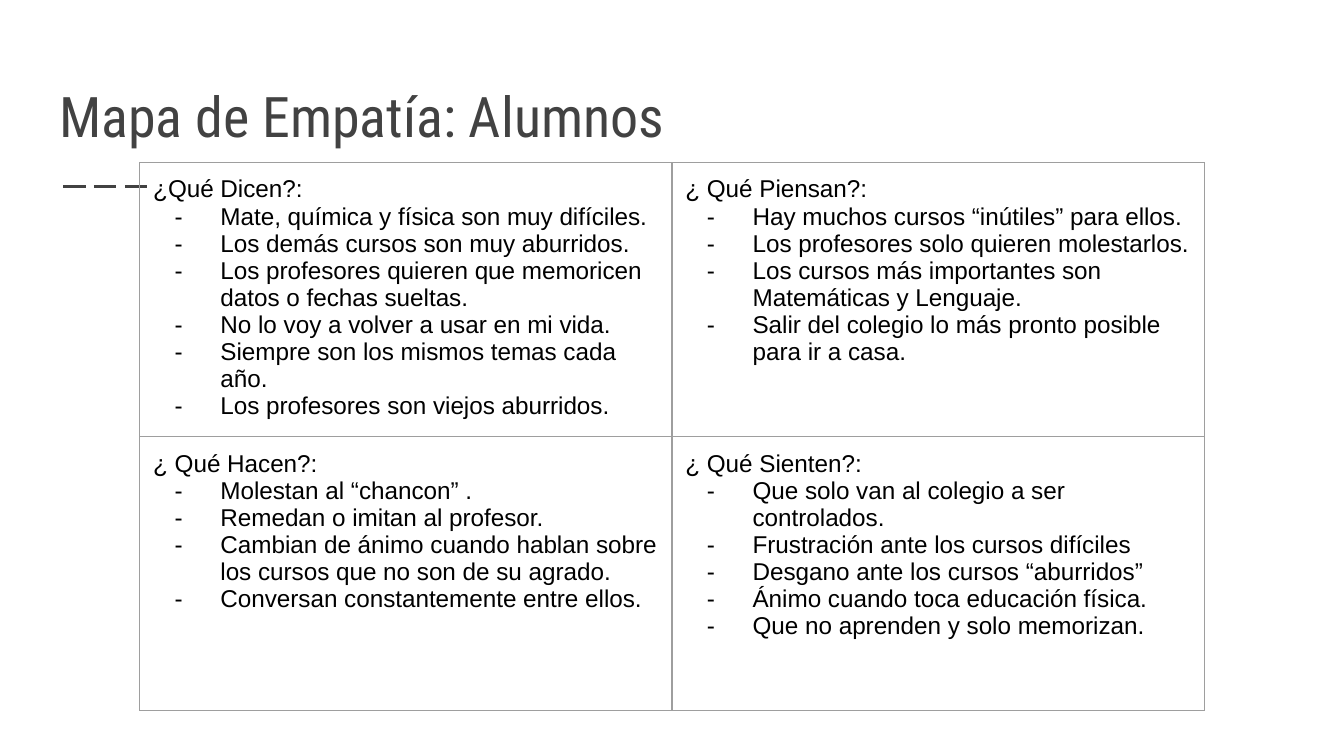
"""Build the empathy map slide: a title, a dashed accent and a two-by-two table."""
from typing import NamedTuple

from lxml.etree import SubElement
from pptx import Presentation
from pptx.dml.color import RGBColor
from pptx.enum.dml import MSO_LINE
from pptx.enum.shapes import MSO_CONNECTOR
from pptx.enum.text import MSO_ANCHOR, MSO_AUTO_SIZE, PP_ALIGN
from pptx.oxml.ns import qn
from pptx.util import Inches, Pt

COLORS = {"title": "424242", "text": "000000", "border": "9E9E9E"}
WIDTH = Inches(10)
HEIGHT = WIDTH * 9 // 16
COLUMNS = ROWS = 2
COLUMN_WIDTH, ROW_HEIGHT = Inches(3.96), Inches(2.04)
TABLE_LEFT, TABLE_TOP = (WIDTH - COLUMNS * COLUMN_WIDTH) // 2, Inches(1.21)
INSET = Inches(0.1)
INDENT, HANGING = Inches(0.5), Inches(-0.34)
BORDER_WIDTH = Pt(0.75)
INSETS = {f"margin_{side}": INSET for side in ("left", "top", "right", "bottom")}


class Quadrant(NamedTuple):
    """One cell of the map, with its question and answers."""
    column: int
    row: int
    question: str
    answers: tuple[str, ...]


QUADRANTS = (
    Quadrant(0, 0, "¿Qué Dicen?:", (
        "Mate, química y física son muy difíciles.",
        "Los demás cursos son muy aburridos.",
        "Los profesores quieren que memoricen datos o fechas sueltas.",
        "No lo voy a volver a usar en mi vida.",
        "Siempre son los mismos temas cada año.",
        "Los profesores son viejos aburridos.",
    )),
    Quadrant(1, 0, "¿ Qué Piensan?:", (
        "Hay muchos cursos “inútiles” para ellos.",
        "Los profesores solo quieren molestarlos.",
        "Los cursos más importantes son Matemáticas y Lenguaje.",
        "Salir del colegio lo más pronto posible para ir a casa.",
    )),
    Quadrant(0, 1, "¿ Qué Hacen?:", (
        "Molestan al “chancon” .",
        "Remedan o imitan al profesor.",
        "Cambian de ánimo cuando hablan sobre los cursos que no son de su agrado.",
        "Conversan constantemente entre ellos.",
    )),
    Quadrant(1, 1, "¿ Qué Sienten?:", (
        "Que solo van al colegio a ser controlados.",
        "Frustración ante los cursos difíciles",
        "Desgano ante los cursos “aburridos”",
        "Ánimo cuando toca educación física.",
        "Que no aprenden y solo memorizan.",
    )),
)


def set_attributes(target: object, values: dict) -> None:
    """Set every named value on the target."""
    for name, value in values.items():
        setattr(target, name, value)


def write(paragraph, text: str, font: str, size: float, color: str) -> None:
    """Add a formatted run to the paragraph."""
    run = paragraph.add_run()
    run.text = text
    set_attributes(run.font, {"name": font, "size": Pt(size), "bold": False})
    run.font.color.rgb = RGBColor.from_string(COLORS[color])


def add_accent(slide) -> None:
    """Draw the dashed line under the title."""
    y = Inches(1.39)
    accent = slide.shapes.add_connector(MSO_CONNECTOR.STRAIGHT, Inches(0.47), y, Inches(1.14), y)
    set_attributes(accent.line, {"width": Pt(1.5), "dash_style": MSO_LINE.LONG_DASH})
    accent.line.color.rgb = RGBColor.from_string(COLORS["title"])
    SubElement(accent.element.spPr, qn("a:effectLst"))


def format_title(slide, text: str) -> None:
    """Place and fill the title placeholder."""
    title = slide.shapes.title
    set_attributes(title, {"left": Inches(0.34), "top": Inches(0.41),
                           "width": Inches(9.32), "height": Inches(0.8)})
    set_attributes(title.text_frame, INSETS | {
        "vertical_anchor": MSO_ANCHOR.BOTTOM, "word_wrap": True, "auto_size": MSO_AUTO_SIZE.NONE})
    paragraph = title.text_frame.paragraphs[0]
    paragraph.alignment = PP_ALIGN.LEFT
    write(paragraph, text, "Roboto Condensed", 30, "title")


def add_borders(cell) -> None:
    """Outline all four sides of the cell."""
    properties = cell._tc.get_or_add_tcPr()
    for index, side in enumerate(("lnL", "lnR", "lnT", "lnB")):
        line = SubElement(properties, qn(f"a:{side}"), w=str(BORDER_WIDTH))
        fill = SubElement(line, qn("a:solidFill"))
        SubElement(fill, qn("a:srgbClr"), val=COLORS["border"])
        properties.insert(index, line)


def add_answer(text_frame, answer: str) -> None:
    """Add an answer with a dash bullet and a hanging indent."""
    paragraph = text_frame.add_paragraph()
    properties = paragraph._p.get_or_add_pPr()
    properties.set("marL", str(INDENT))
    properties.set("indent", str(HANGING))
    SubElement(properties, qn("a:buFont"), typeface="Arial")
    SubElement(properties, qn("a:buChar"), char="-")
    write(paragraph, answer, "Arial", 13, "text")


def fill_quadrant(table, quadrant: Quadrant) -> None:
    """Write and outline one quadrant of the map."""
    cell = table.cell(quadrant.row, quadrant.column)
    set_attributes(cell, INSETS | {"vertical_anchor": MSO_ANCHOR.TOP})
    cell.fill.background()
    add_borders(cell)
    write(cell.text_frame.paragraphs[0], quadrant.question, "Arial", 13, "text")
    for answer in quadrant.answers:
        add_answer(cell.text_frame, answer)


def add_map(slide) -> None:
    """Add the empathy map table."""
    table = slide.shapes.add_table(ROWS, COLUMNS, TABLE_LEFT, TABLE_TOP,
                                   COLUMNS * COLUMN_WIDTH, ROWS * ROW_HEIGHT).table
    set_attributes(table, {"first_row": False, "horz_banding": False})
    for quadrant in QUADRANTS:
        fill_quadrant(table, quadrant)


def main() -> None:
    """Create and save the presentation."""
    presentation = Presentation()
    set_attributes(presentation, {"slide_width": WIDTH, "slide_height": HEIGHT})
    slide = presentation.slides.add_slide(presentation.slide_layouts.get_by_name("Title Only"))
    add_accent(slide)
    format_title(slide, "Mapa de Empatía: Alumnos")
    add_map(slide)
    presentation.save("out.pptx")


if __name__ == "__main__":
    main()
